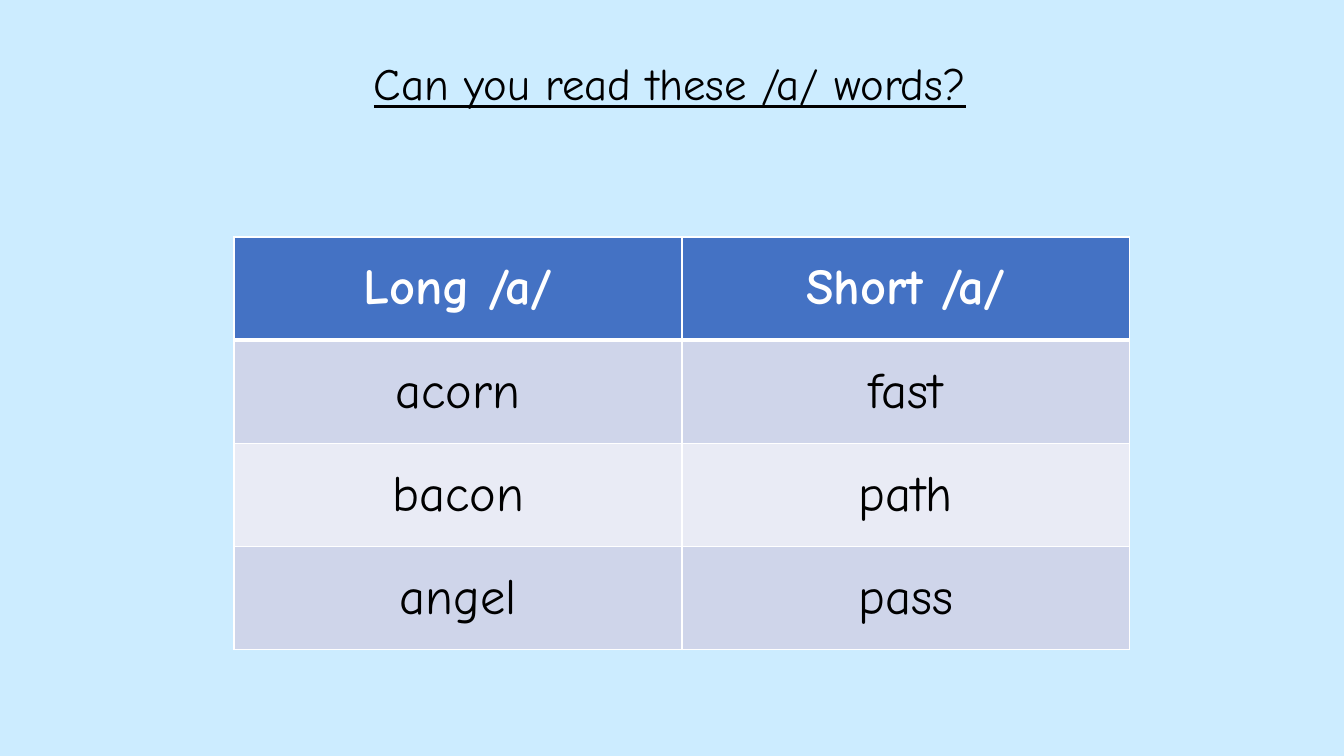
from lxml import etree
from pptx import Presentation
from pptx import util as u
from pptx.dml.color import RGBColor
from pptx.enum import text
from pptx.oxml.ns import qn

PX = 12192000 / 1344
FONT = "Comic Neue"
SKY = RGBColor(0xCC, 0xEC, 0xFF)
BLUE = RGBColor(0x44, 0x72, 0xC4)
BAND_DARK = RGBColor(0xCF, 0xD5, 0xEA)
BAND_LIGHT = RGBColor(0xE9, 0xEB, 0xF5)
WHITE = RGBColor(0xFF, 0xFF, 0xFF)
BLACK = RGBColor(0, 0, 0)

WORDS = [
    ("Long /a/", "Short /a/"),
    ("acorn", "fast"),
    ("bacon", "path"),
    ("angel", "pass"),
]


def px(n):
    return u.Emu(round(n * PX))


def write(tf, words, size=36, color=BLACK, bold=False, underline=False):
    p = tf.paragraphs[0]
    p.alignment = text.PP_ALIGN.CENTER
    p.line_spacing = 1.0
    r = p.add_run()
    r.text = words
    f = r.font
    f.name, f.size, f.bold, f.underline = FONT, u.Pt(size), bold, underline
    f.color.rgb = color


def set_border(cell, side, width):
    tc_pr = cell._tc.get_or_add_tcPr()
    ln = etree.SubElement(tc_pr, qn(f"a:ln{side}"), w=str(u.Pt(width)))
    fill = etree.SubElement(ln, qn("a:solidFill"))
    etree.SubElement(fill, qn("a:srgbClr"), val=str(WHITE))


def add_title(s, x, y, w, h):
    sp = s.shapes.title
    sp.left, sp.top, sp.width, sp.height = px(x), px(y), px(w), px(h)
    tf = sp.text_frame
    tf.word_wrap = True
    tf.auto_size = text.MSO_AUTO_SIZE.SHAPE_TO_FIT_TEXT
    tf.vertical_anchor = text.MSO_ANCHOR.TOP
    write(tf, "Can you read these /a/ words?", size=32, underline=True)


def add_word_table(s, x, y, w, h):
    rows, cols = len(WORDS), len(WORDS[0])
    table = s.shapes.add_table(rows, cols, px(x), px(y), px(w), px(h)).table
    for col in table.columns:
        col.width = px(w / cols)
    for i, words in enumerate(WORDS):
        table.rows[i].height = px(h / rows)
        header = i == 0
        for j, word in enumerate(words):
            cell = table.cell(i, j)
            cell.vertical_anchor = text.MSO_ANCHOR.MIDDLE
            # Thick rule between the header and the words
            for side in "LRTB":
                thick = (side == "B" and header) or (side == "T" and i == 1)
                set_border(cell, side, 3 if thick else 1)
            cell.fill.solid()
            band = BAND_DARK if i % 2 else BAND_LIGHT
            cell.fill.fore_color.rgb = BLUE if header else band
            write(cell.text_frame, word, bold=header,
                  color=WHITE if header else BLACK)


def main():
    prs = Presentation()
    prs.slide_width, prs.slide_height = px(1344), px(756)
    s = prs.slides.add_slide(prs.slide_layouts[5])
    s.background.fill.solid()
    s.background.fill.fore_color.rgb = SKY
    add_title(s, 10, 51, 1320, 65)
    add_word_table(s, 234, 237, 896, 413)
    prs.save("out.pptx")


if __name__ == "__main__":
    main()
